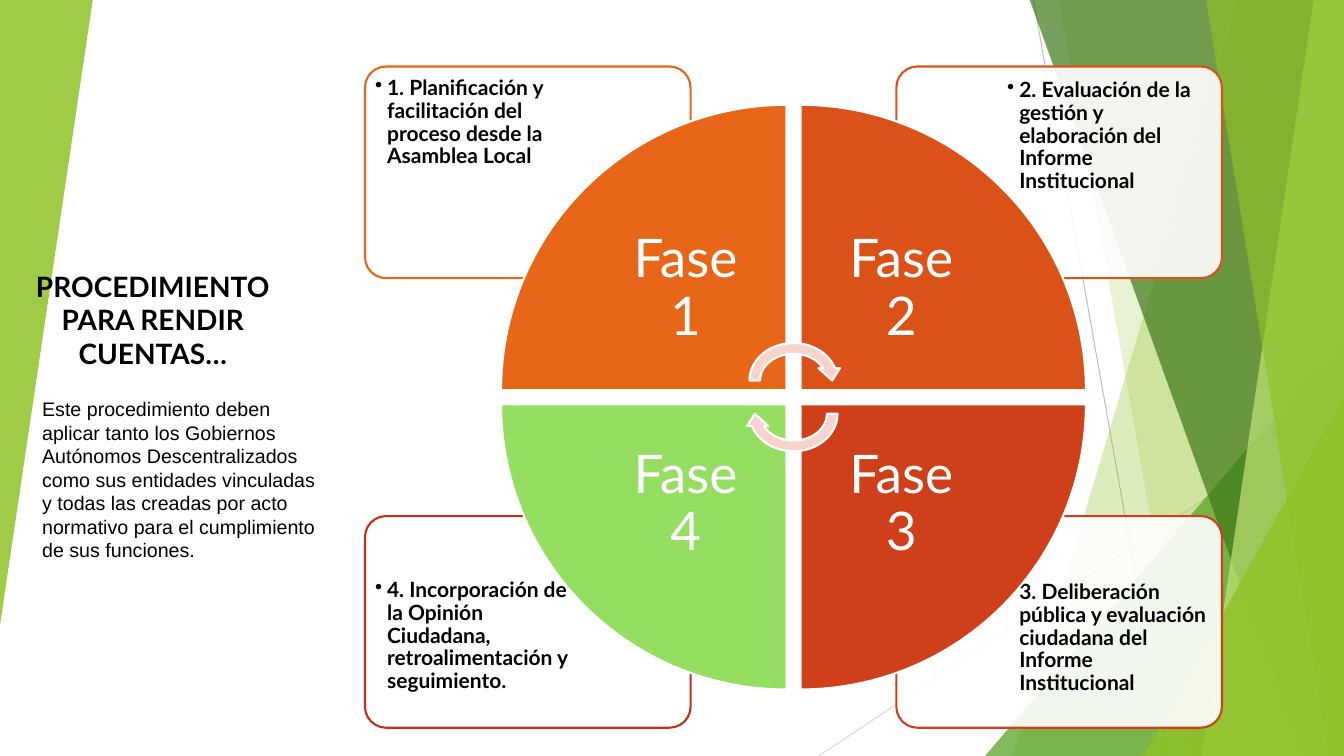
import pptx
import pptx.util
import pptx.dml.color
import pptx.enum.shapes
import pptx.enum.text
import pptx.oxml.ns
import lxml.etree

SHAPES = pptx.enum.shapes.MSO_SHAPE
ALIGN = pptx.enum.text.PP_ALIGN
ANCHOR = pptx.enum.text.MSO_ANCHOR
EMU_PER_PX = 9144
SLIDE_WIDTH, SLIDE_HEIGHT = 1333, 750


def px(*lengths):
    return [pptx.util.Emu(length * EMU_PER_PX) for length in lengths]


def color(hex_string):
    return pptx.dml.color.RGBColor.from_string(hex_string)


def child(parent, tag, **attributes):
    return lxml.etree.SubElement(parent, pptx.oxml.ns.qn(tag), attributes)


def paint(shape, fill, opacity=100, line=None):
    shape.shadow.inherit = False
    shape.fill.solid()
    shape.fill.fore_color.rgb = color(fill)
    if opacity < 100:
        fill_color = shape.fill._xPr.find(".//" + pptx.oxml.ns.qn("a:srgbClr"))
        child(fill_color, "a:alpha", val=str(opacity * 1000))
    if line:
        shape.line.color.rgb = color(line)
        shape.line.width = pptx.util.Pt(1.5)
    else:
        shape.line.fill.background()


def add_preset(slide, preset, box, fill, opacity=100, line=None, rotation=0, adjustment=None):
    shape = slide.shapes.add_shape(preset, *px(*box))
    shape.rotation = rotation
    if adjustment is not None:
        shape.adjustments[0] = adjustment
    paint(shape, fill, opacity, line)


def add_text(slide, box, text, size, font="Lato", ink="000000", bold=False,
             align=ALIGN.LEFT, anchor=ANCHOR.TOP, insets=(10, 5), spacing=1.0):
    frame = slide.shapes.add_textbox(*px(*box)).text_frame
    frame.word_wrap = True
    frame.vertical_anchor = anchor
    frame.margin_left, frame.margin_top = px(*insets)
    frame.margin_right, frame.margin_bottom = px(*insets)
    paragraph = frame.paragraphs[0]
    paragraph.text = text
    paragraph.alignment = align
    paragraph.line_spacing = spacing
    paragraph.font.name = font
    paragraph.font.size = pptx.util.Pt(size)
    paragraph.font.bold = bold
    paragraph.font.color.rgb = color(ink)
    return paragraph


def add_bullet(paragraph, indent):
    properties = paragraph._p.get_or_add_pPr()
    width = px(indent)[0]
    properties.set("marL", str(width))
    properties.set("indent", str(-width))
    child(properties, "a:buChar", char="•")


def add_backdrop(slide, box):
    left, top, width, height = box
    right, bottom = left + width, top + height
    for start_x, start_y, end_x, end_y, ink in [
        (1025, 0, 1158, 750, "BFBFBF"),
        (1333, 403, 812, 750, "D9D9D9"),
    ]:
        connector = slide.shapes.add_connector(
            pptx.enum.shapes.MSO_CONNECTOR.STRAIGHT,
            *px(left + start_x, top + start_y, left + end_x, top + end_y))
        connector.line.color.rgb = color(ink)
        connector.line.width = pptx.util.Pt(0.75)
        child(connector._element.spPr, "a:effectLst")

    def add_band(top_x, bottom_x, fill, opacity):
        builder = slide.shapes.build_freeform(left + top_x, top - 1, scale=EMU_PER_PX)
        builder.add_line_segments(
            [(right, top - 1), (right, bottom), (left + bottom_x, bottom)], close=True)
        paint(builder.convert_to_shape(), fill, opacity)

    def add_corner(corner_width, corner_height, fill, opacity):
        corner = (right - corner_width, bottom - corner_height, corner_width, corner_height)
        add_preset(slide, SHAPES.ISOSCELES_TRIANGLE, corner, fill, opacity, adjustment=1)

    add_band(1228, 1004, "90C226", 30)
    add_band(1050, 1183, "90C226", 20)
    add_corner(356, 417, "54A021", 72)
    add_band(1021, 1291, "3F7819", 70)
    add_band(1303, 1192, "C0E474", 70)
    add_band(1196, 1318, "90C226", 65)
    add_corner(199, 357, "90C226", 80)
    add_preset(slide, SHAPES.ISOSCELES_TRIANGLE, (left, top, 92, 620), "90C226", 85,
               rotation=180, adjustment=1)


def add_introduction(slide, box):
    left, top, width, height = box
    add_text(slide, (left, top, 259, 111), "PROCEDIMIENTO PARA RENDIR CUENTAS…", 20,
             bold=True, align=ALIGN.CENTER)
    add_text(slide, (left + 10, top + 127, width - 10, height - 127),
             "Este procedimiento deben aplicar tanto los Gobiernos Autónomos "
             "Descentralizados como sus entidades vinculadas y todas las creadas por acto "
             "normativo para el cumplimiento de sus funciones.", 14, font="Arial")


def add_cycle(slide, box, phases):
    left, top, width, height = box
    card_width, card_height = 323, 210
    wedge, label, gap = 283, 200, 14
    center_x, center_y = left + width // 2, top + height // 2

    def quadrant(column, row, size):
        x = center_x + gap // 2 if column else center_x - gap // 2 - size
        y = center_y + gap // 2 if row else center_y - gap // 2 - size
        return x, y, size, size

    cells = [(0, 0), (1, 0), (1, 1), (0, 1)]
    for (column, row), (caption, fill, border) in zip(cells, phases):
        card_x = left + column * (width - card_width)
        card_y = top + row * (height - card_height)
        add_preset(slide, SHAPES.ROUNDED_RECTANGLE, (card_x, card_y, card_width, card_height),
                   "FFFFFF", 90, border, adjustment=0.1)
        text_box = (card_x + (102 if column else 4), card_y + (57 if row else 5), 217, 148)
        inset = 8 if column else 6
        add_bullet(add_text(slide, text_box, caption, 15, bold=True,
                            insets=(inset, inset), spacing=0.9), 12)

    for index, ((column, row), (caption, fill, border)) in enumerate(zip(cells, phases)):
        add_preset(slide, SHAPES.PIE_WEDGE, quadrant(column, row, wedge), fill,
                   line="FFFFFF", rotation=90 * index)
        add_text(slide, quadrant(column, row, label), f"Fase {index + 1}", 38, ink="FFFFFF",
                 align=ALIGN.CENTER, anchor=ANCHOR.MIDDLE, insets=(30, 30), spacing=0.9)

    for arrow_y, rotation in [(269, 0), (302, 180)]:
        add_preset(slide, SHAPES.CIRCULAR_ARROW, (center_x - 49, top + arrow_y, 98, 85),
                   "F6D3CC", line="FFFFFF", rotation=rotation)


def main():
    presentation = pptx.Presentation()
    presentation.slide_width, presentation.slide_height = px(SLIDE_WIDTH, SLIDE_HEIGHT)
    slide = presentation.slides.add_slide(presentation.slide_layouts[6])
    add_backdrop(slide, (0, 0, SLIDE_WIDTH, SLIDE_HEIGHT))
    add_introduction(slide, (22, 262, 304, 302))
    add_cycle(slide, (362, 66, 850, 656), [
        ("1. Planificación y facilitación del proceso desde la Asamblea Local",
         "E76618", "E76618"),
        ("2. Evaluación de la gestión y elaboración del Informe Institucional",
         "DB5219", "DB5219"),
        ("3. Deliberación pública y evaluación ciudadana del Informe Institucional",
         "CF3F1A", "CF3F1A"),
        ("4. Incorporación de la Opinión Ciudadana, retroalimentación y seguimiento.",
         "94DE61", "C42F1A"),
    ])
    presentation.save("out.pptx")


if __name__ == "__main__":
    main()
